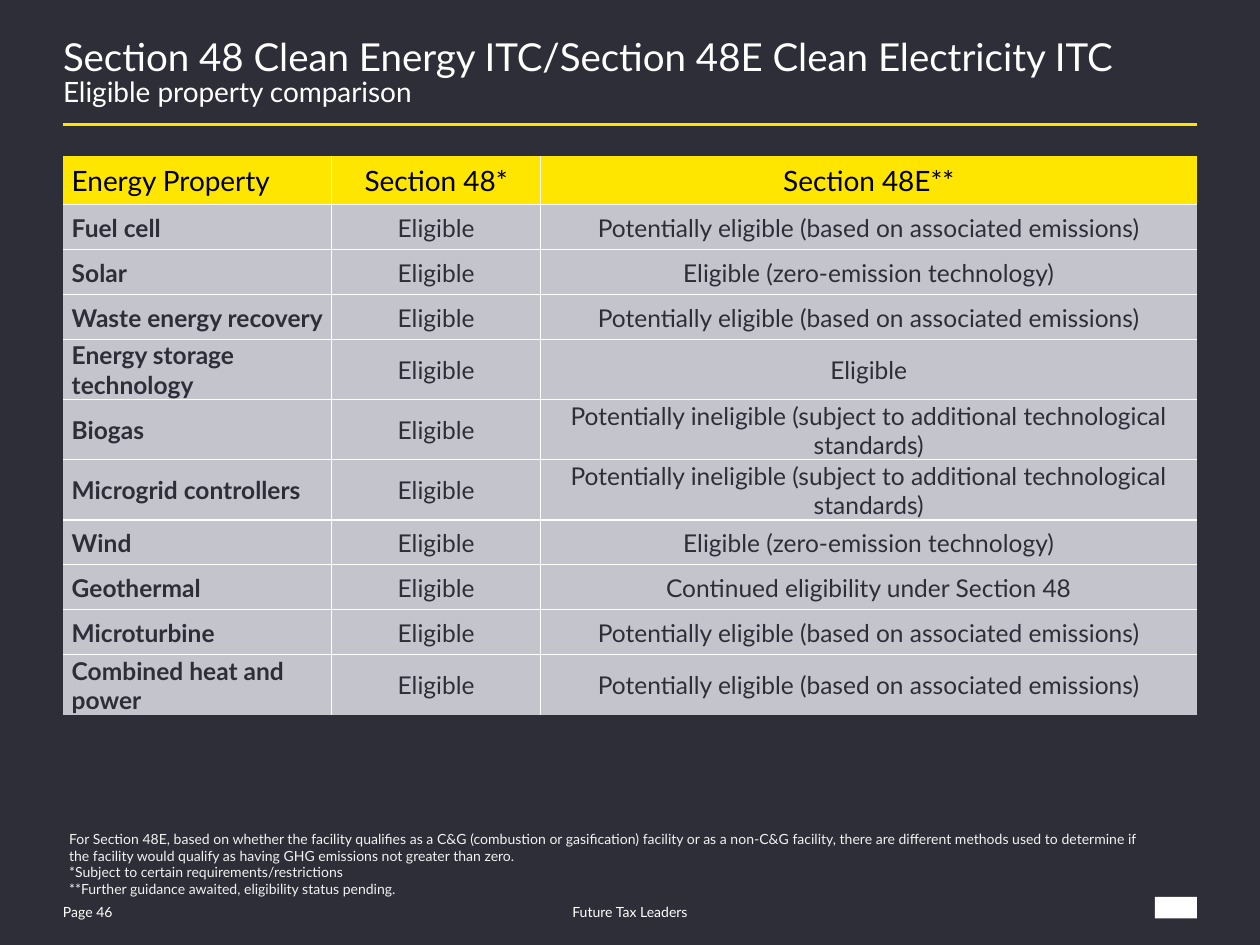
from dataclasses import dataclass
from typing import NamedTuple

from lxml.etree import SubElement
from pptx import Presentation
from pptx.dml.color import RGBColor
from pptx.enum.shapes import MSO_CONNECTOR, MSO_SHAPE
from pptx.enum.text import MSO_ANCHOR, MSO_AUTO_SIZE, PP_ALIGN
from pptx.oxml.ns import qn
from pptx.util import Pt


@dataclass(frozen=True)
class Theme:
    font: str = "Lato"
    dark: str = "2E2E38"
    yellow: str = "FFE600"
    white: str = "FFFFFF"
    black: str = "000000"
    gray: str = "C4C4CD"
    pale: str = "F2F2F2"
    title: float = 22
    header: float = 16
    body: float = 14
    small: float = 8


class Box(NamedTuple):
    left: float
    top: float
    width: float
    height: float


class Label(NamedTuple):
    box: Box
    lines: list[str]
    color: str
    margins: tuple[float, float, float, float]
    align: PP_ALIGN = PP_ALIGN.LEFT


class Energy(NamedTuple):
    name: str
    section_48e: str
    section_48: str = "Eligible"


T = Theme()
LEFT, WIDTH = 36, 648
COL_WIDTHS = [153.5, 119.5, 375]
HEADER_HEIGHT, ROW_HEIGHT = 21, 25.7
HEADINGS = ["Energy Property", "Section 48*", "Section 48E**"]
POTENTIAL = "Potentially eligible (based on associated emissions)"
INELIGIBLE = "Potentially ineligible (subject to additional technological standards)"
ZERO = "Eligible (zero-emission technology)"
ENERGIES = [
    Energy("Fuel cell", POTENTIAL),
    Energy("Solar", ZERO),
    Energy("Waste energy recovery", POTENTIAL),
    Energy("Energy storage technology", "Eligible"),
    Energy("Biogas", INELIGIBLE),
    Energy("Microgrid controllers", INELIGIBLE),
    Energy("Wind", ZERO),
    Energy("Geothermal", "Continued eligibility under Section 48"),
    Energy("Microturbine", POTENTIAL),
    Energy("Combined heat and power", POTENTIAL),
]
LABELS = [
    Label(Box(LEFT, 513.4, 52.6, 14.4), ["Page 46"], T.white, (0, 3, 0, 0)),
    Label(Box(221.8, 513.4, 276.5, 14.4), ["Future Tax Leaders"], T.white,
          (0, 3, 0, 0), PP_ALIGN.CENTER),
    Label(Box(32.4, 470.9, 634.3, 46), [
        "For Section 48E, based on whether the facility qualifies as a C&G "
        "(combustion or gasification) facility or as a non-C&G facility, there are "
        "different methods used to determine if the facility would qualify as having "
        "GHG emissions not greater than zero.",
        "*Subject to certain requirements/restrictions",
        "**Further guidance awaited, eligibility status pending.",
    ], T.pale, (7.2, 3.6, 7.2, 3.6)),
]


def rgb(color: str) -> RGBColor:
    return RGBColor.from_string(color)


def add_run(p, text: str, size: float, color: str, bold: bool = False) -> None:
    r = p.add_run()
    r.text = text
    r.font.name = T.font
    r.font.size = Pt(size)
    r.font.bold = bold
    r.font.color.rgb = rgb(color)


def set_margins(obj, left: float, top: float, right: float, bottom: float) -> None:
    obj.margin_left, obj.margin_top = Pt(left), Pt(top)
    obj.margin_right, obj.margin_bottom = Pt(right), Pt(bottom)


def add_label(s, label: Label) -> None:
    tf = s.shapes.add_textbox(*map(Pt, label.box)).text_frame
    tf.word_wrap = True
    set_margins(tf, *label.margins)
    for i, line in enumerate(label.lines):
        p = tf.add_paragraph() if i else tf.paragraphs[0]
        p.alignment = label.align
        add_run(p, line, T.small, label.color)


def add_title(s) -> None:
    sp = s.shapes.title
    sp.left, sp.top, sp.width, sp.height = map(Pt, Box(LEFT, 23, WIDTH, 46.8))
    tf = sp.text_frame
    tf.word_wrap = True
    tf.auto_size = MSO_AUTO_SIZE.NONE
    tf.vertical_anchor = MSO_ANCHOR.TOP
    set_margins(tf, 0, 0, 0, 0)
    p = tf.paragraphs[0]
    p.alignment = PP_ALIGN.LEFT
    p.line_spacing = 0.85
    add_run(p, "Section 48 Clean Energy ITC/Section 48E Clean Electricity ITC",
            T.title, T.white)
    p.add_line_break()
    add_run(p, "Eligible property comparison", T.header, T.white)


def add_rule(s, top: float) -> None:
    line = s.shapes.add_connector(MSO_CONNECTOR.STRAIGHT, Pt(LEFT), Pt(top),
                                  Pt(LEFT + WIDTH), Pt(top))
    line.line.color.rgb = rgb(T.yellow)
    line.line.width = Pt(1.5)
    SubElement(line._element.spPr, qn("a:effectLst"))


def set_borders(cell, sides: dict[str, bool]) -> None:
    tcPr = cell._tc.get_or_add_tcPr()
    for side, shown in sides.items():
        ln = SubElement(tcPr, qn(f"a:ln{side}"), w=str(Pt(1)))
        fill = SubElement(ln, qn("a:solidFill" if shown else "a:noFill"))
        if shown:
            SubElement(fill, qn("a:srgbClr"), val=T.white)


def add_table(s, box: Box) -> None:
    rows = [HEADINGS] + [[e.name, e.section_48, e.section_48e] for e in ENERGIES]
    last_row, last_col = len(rows) - 1, len(HEADINGS) - 1
    table = s.shapes.add_table(len(rows), len(HEADINGS), *map(Pt, box)).table
    for column, width in zip(table.columns, COL_WIDTHS):
        column.width = Pt(width)
    for i, texts in enumerate(rows):
        header = i == 0
        table.rows[i].height = Pt(HEADER_HEIGHT if header else ROW_HEIGHT)
        for j, text in enumerate(texts):
            cell = table.cell(i, j)
            set_borders(cell, {"L": j > 0, "R": j < last_col,
                               "T": i > 0, "B": i < last_row})
            cell.fill.solid()
            cell.fill.fore_color.rgb = rgb(T.yellow if header else T.gray)
            cell.vertical_anchor = MSO_ANCHOR.MIDDLE
            margins = (5, 4.3, 5, 4.3) if header else (0.7 if j else 5, 0.7, 0.7, 0)
            set_margins(cell, *margins)
            p = cell.text_frame.paragraphs[0]
            p.alignment = PP_ALIGN.CENTER if j else PP_ALIGN.LEFT
            add_run(p, text, T.header if header else T.body,
                    T.black if header else T.dark, not header and j == 0)


def add_emblem(s, box: Box) -> None:
    sp = s.shapes.add_shape(MSO_SHAPE.RECTANGLE, *map(Pt, box))
    sp.shadow.inherit = False
    sp.fill.solid()
    sp.fill.fore_color.rgb = rgb(T.white)
    sp.line.fill.background()


def main() -> None:
    prs = Presentation()
    prs.slide_width, prs.slide_height = Pt(720), Pt(540)
    s = prs.slides.add_slide(prs.slide_layouts[5])
    s.background.fill.solid()
    s.background.fill.fore_color.rgb = rgb(T.dark)
    add_title(s)
    add_rule(s, 71.3)
    add_table(s, Box(LEFT, 89.3, WIDTH, HEADER_HEIGHT + ROW_HEIGHT * len(ENERGIES)))
    for label in LABELS:
        add_label(s, label)
    add_emblem(s, Box(660, 512.6, 24, 12.2))
    prs.save("out.pptx")


if __name__ == "__main__":
    main()
